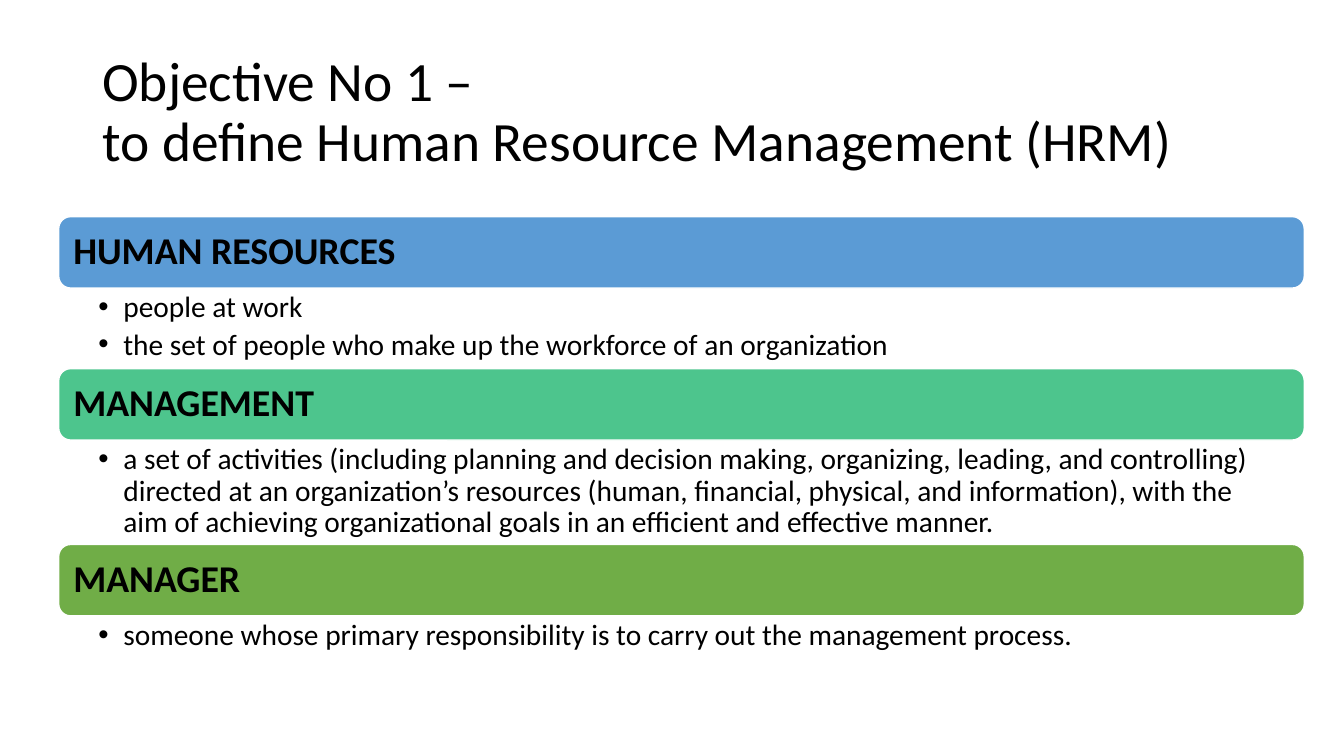
from dataclasses import dataclass

from lxml.etree import SubElement
from pptx import Presentation
from pptx.dml.color import RGBColor as Rgb
from pptx.enum.shapes import MSO_SHAPE as Shape
from pptx.enum.text import MSO_ANCHOR as Anchor, PP_ALIGN as Align
from pptx.oxml.ns import qn
from pptx.util import Cm, Pt


@dataclass(frozen=True)
class Theme:
    font: str = "Calibri"
    ink: str = "000000"
    edge: str = "FFFFFF"
    blue: str = "5B9BD5"
    mint: str = "4DC58D"
    green: str = "70AD47"
    title: float = 39.6
    head: float = 27
    body: float = 21


THEME = Theme()

# Layout in centimetres
LEFT, TOP, WIDTH, BAR = 1.48, 5.46, 31.39, 1.8

# Heading, bar colour, height of the list, list items
PARTS = [
    ("HUMAN RESOURCES", THEME.blue, 2.03, [
        "people at work",
        "the set of people who make up the workforce of an organization",
    ]),
    ("MANAGEMENT", THEME.mint, 2.63, [
        "a set of activities (including planning and decision making, "
        "organizing, leading, and controlling) directed at an "
        "organization’s resources (human, financial, physical, and "
        "information), with the aim of achieving organizational goals "
        "in an efficient and effective manner.",
    ]),
    ("MANAGER", THEME.green, 1.25, [
        "someone whose primary responsibility is to carry out the "
        "management process.",
    ]),
]


def add_dot(para):
    """Give a paragraph a hanging bullet."""
    props = para._p.get_or_add_pPr()
    props.set("marL", str(Cm(0.63)))
    props.set("indent", str(-Cm(0.63)))
    SubElement(props, qn("a:buFont"), typeface="Arial")
    SubElement(props, qn("a:buChar"), char="•")


def write(shape, items, size, bold=False, dots=False, gap=0,
          anchor=Anchor.TOP, pads=(0.25, 0.13, 0.25, 0.13)):
    """Fill a shape with one paragraph per item; newlines break lines."""
    frame = shape.text_frame
    frame.word_wrap = True
    frame.vertical_anchor = anchor
    (frame.margin_left, frame.margin_top,
     frame.margin_right, frame.margin_bottom) = map(Cm, pads)
    for num, item in enumerate(items):
        para = frame.add_paragraph() if num else frame.paragraphs[0]
        para.alignment = Align.LEFT
        para.line_spacing = 0.9
        para.space_after = Pt(gap)
        if dots:
            add_dot(para)
        for row, line in enumerate(item.split("\n")):
            if row:
                para.add_line_break()
            run = para.add_run()
            run.text = line
            font = run.font
            font.name, font.size, font.bold = THEME.font, Pt(size), bold
            font.color.rgb = Rgb.from_string(THEME.ink)


def add_text(slide, box, items, size, **style):
    write(slide.shapes.add_textbox(*map(Cm, box)), items, size, **style)


def add_bar(slide, top, text, color):
    box = map(Cm, (LEFT, top, WIDTH, BAR))
    bar = slide.shapes.add_shape(Shape.ROUNDED_RECTANGLE, *box)
    bar.shadow.inherit = False
    bar.fill.solid()
    bar.fill.fore_color.rgb = Rgb.from_string(color)
    bar.line.color.rgb = Rgb.from_string(THEME.edge)
    bar.line.width = Pt(1)
    write(bar, [text], THEME.head, bold=True, anchor=Anchor.MIDDLE,
          pads=(0.28, 0.28, 0.28, 0.28))


def main():
    deck = Presentation()
    deck.slide_width, deck.slide_height = Cm(33.87), Cm(19.05)
    slide = deck.slides.add_slide(deck.slide_layouts[6])

    # Title
    title = "Objective No 1 –\nto define Human Resource Management (HRM)"
    add_text(slide, (2.33, 1.02, 29.21, 3.68), [title], THEME.title,
             anchor=Anchor.MIDDLE)

    # Stack of bars, each with its list below
    top = TOP
    for head, color, height, items in PARTS:
        add_bar(slide, top, head, color)
        top += BAR
        add_text(slide, (LEFT, top, WIDTH, height), items, THEME.body,
                 dots=True, gap=4.2, pads=(1, 0.1, 0.53, 0.1))
        top += height

    deck.save("out.pptx")


if __name__ == "__main__":
    main()
